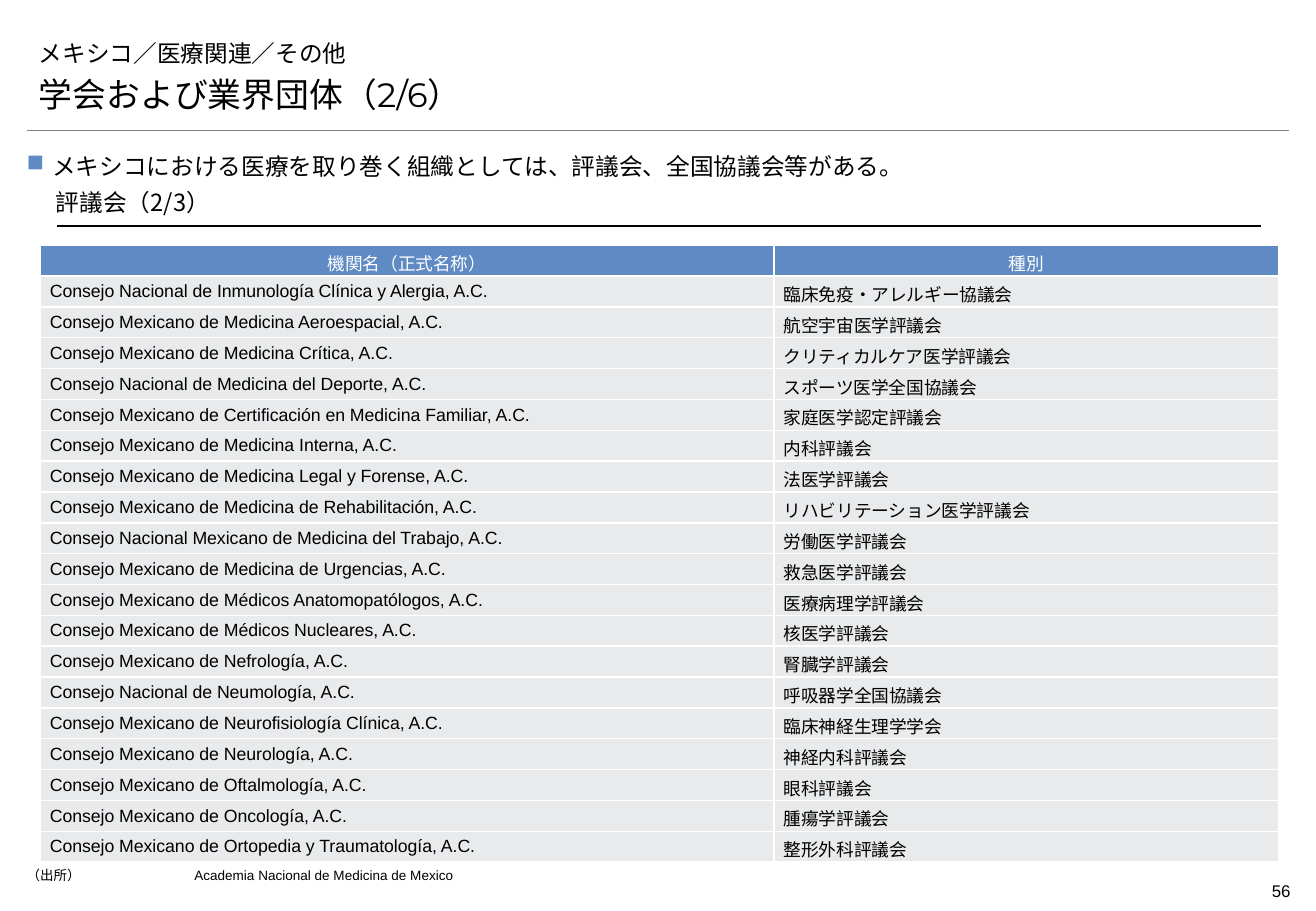
from lxml import etree
from pptx import Presentation
from pptx import util as u
from pptx.dml.color import RGBColor
from pptx.enum import shapes, text
from pptx.oxml import ns

BLACK, WHITE, BLUE, PALE, GRAY = "000000", "FFFFFF", "5F8AC3", "E8EAEC", "7F7F7F"

COUNCILS = [
    ("Consejo Nacional de Inmunología Clínica y Alergia, A.C.", "臨床免疫・アレルギー協議会"),
    ("Consejo Mexicano de Medicina Aeroespacial, A.C.", "航空宇宙医学評議会"),
    ("Consejo Mexicano de Medicina Crítica, A.C.", "クリティカルケア医学評議会"),
    ("Consejo Nacional de Medicina del Deporte, A.C.", "スポーツ医学全国協議会"),
    ("Consejo Mexicano de Certificación en Medicina Familiar, A.C.", "家庭医学認定評議会"),
    ("Consejo Mexicano de Medicina Interna, A.C.", "内科評議会"),
    ("Consejo Mexicano de Medicina Legal y Forense, A.C.", "法医学評議会"),
    ("Consejo Mexicano de Medicina de Rehabilitación, A.C.", "リハビリテーション医学評議会"),
    ("Consejo Nacional Mexicano de Medicina del Trabajo, A.C.", "労働医学評議会"),
    ("Consejo Mexicano de Medicina de Urgencias, A.C.", "救急医学評議会"),
    ("Consejo Mexicano de Médicos Anatomopatólogos, A.C.", "医療病理学評議会"),
    ("Consejo Mexicano de Médicos Nucleares, A.C.", "核医学評議会"),
    ("Consejo Mexicano de Nefrología, A.C.", "腎臓学評議会"),
    ("Consejo Nacional de Neumología, A.C.", "呼吸器学全国協議会"),
    ("Consejo Mexicano de Neurofisiología Clínica, A.C.", "臨床神経生理学学会"),
    ("Consejo Mexicano de Neurología, A.C.", "神経内科評議会"),
    ("Consejo Mexicano de Oftalmología, A.C.", "眼科評議会"),
    ("Consejo Mexicano de Oncología, A.C.", "腫瘍学評議会"),
    ("Consejo Mexicano de Ortopedia y Traumatología, A.C.", "整形外科評議会"),
]


def color(value):
    return RGBColor.from_string(value)


def add_xml(parent, tag, **attributes):
    names = {name: str(value) for name, value in attributes.items()}
    return etree.SubElement(parent, ns.qn(tag), names)


class Sheet:
    """Current slide and its style; lengths are percent of the slide's size."""

    def __init__(self, deck, font="Arial"):
        self.deck, self.font = deck, font
        self.page = deck.slides.add_slide(deck.slide_layouts[1])

    def x(self, share):
        return u.Emu(round(self.deck.slide_width * share / 100))

    def y(self, share):
        return u.Emu(round(self.deck.slide_height * share / 100))

    def area(self, left, top, width, height):
        return self.x(left), self.y(top), self.x(width), self.y(height)

    def style(self, para, size, font=None, ink=BLACK, align=text.PP_ALIGN.LEFT):
        para.alignment = align
        para.font.size, para.font.name = u.Pt(size), font or self.font
        para.font.color.rgb = color(ink)

    def heading(self, box, words, area, size):
        box.left, box.top, box.width, box.height = self.area(*area)
        frame = box.text_frame
        frame.text = words
        frame.auto_size = text.MSO_AUTO_SIZE.NONE
        frame.vertical_anchor = text.MSO_ANCHOR.BOTTOM
        para = frame.paragraphs[0]
        settings = para._p.get_or_add_pPr()
        settings.set("marL", "0")
        settings.set("indent", "0")
        add_xml(settings, "a:buNone")
        para.space_before = u.Pt(0)
        self.style(para, size, "Montserrat")

    def label(self, words, area, size, top=0, bottom=0, bullet=None, tab=None,
              anchor=text.MSO_ANCHOR.TOP, **style):
        frame = self.page.shapes.add_textbox(*self.area(*area)).text_frame
        frame.word_wrap, frame.vertical_anchor = True, anchor
        frame.margin_left = frame.margin_right = 0
        frame.margin_top, frame.margin_bottom = self.y(top), self.y(bottom)
        para = frame.paragraphs[0]
        para.text = words
        settings = para._p.get_or_add_pPr()
        if bullet:
            indent = self.x(1.94)
            settings.set("marL", str(indent))
            settings.set("indent", str(-indent))
            add_xml(add_xml(settings, "a:buClr"), "a:srgbClr", val=BLUE)
            add_xml(settings, "a:buChar", char=bullet)
        if tab:
            add_xml(add_xml(settings, "a:tabLst"), "a:tab", pos=self.x(tab), algn="l")
        self.style(para, size, **style)
        return para

    def rule(self, left, right, level, ink, weight):
        line = self.page.shapes.add_connector(
            shapes.MSO_CONNECTOR.STRAIGHT,
            self.x(left), self.y(level), self.x(right), self.y(level))
        line.line.color.rgb, line.line.width = color(ink), u.Pt(weight)
        add_xml(line._element.spPr, "a:effectLst")

    def cell(self, cell, words, fill, japanese, **style):
        cell.text = words
        cell.vertical_anchor = text.MSO_ANCHOR.MIDDLE
        cell.margin_left = cell.margin_right = self.x(0.74)
        cell.margin_top = self.y(0.53)
        # Japanese lines are taller and need the lower margin
        cell.margin_bottom = 0 if japanese else self.y(0.53)
        settings = cell._tc.get_or_add_tcPr()
        for side in "LRTB":
            border = add_xml(settings, f"a:ln{side}", w=u.Pt(1))
            add_xml(add_xml(border, "a:solidFill"), "a:srgbClr", val=WHITE)
        cell.fill.solid()
        cell.fill.fore_color.rgb = color(fill)
        self.style(cell.text_frame.paragraphs[0], 10.5, **style)

    def table(self, header, rows, area, widths):
        table = self.page.shapes.add_table(
            len(rows) + 1, len(header), *self.area(*area)).table
        for column, width in zip(table.columns, widths):
            column.width = self.x(width)
        for row in table.rows:
            row.height = self.y(area[3] / (len(rows) + 1))
        for index, words in enumerate(header):
            self.cell(table.cell(0, index), words, BLUE, True,
                      ink=WHITE, align=text.PP_ALIGN.CENTER)
        for number, row in enumerate(rows, 1):
            for index, words in enumerate(row):
                self.cell(table.cell(number, index), words, PALE, index == 1)


def main():
    deck = Presentation()
    deck.slide_width, deck.slide_height = u.Inches(10.83), u.Inches(7.5)
    sheet = Sheet(deck)
    title, subject = sheet.page.placeholders
    left, width = 2.03, 95.94

    # Title block and page number
    sheet.rule(left, left + width, 14.27, GRAY, 0.25)
    sheet.heading(title, "メキシコ／医療関連／その他", (left, 2.8, width, 5.2), 14)
    sheet.heading(subject, "学会および業界団体（2/6）", (left, 8, width, 5.2), 20)
    sheet.label("56", (90.77, 96, 7.29, 3.6), 10, top=0.67, bottom=0.67,
                align=text.PP_ALIGN.RIGHT)

    # Key message and section heading
    message = sheet.label("メキシコにおける医療を取り巻く組織としては、評議会、全国協議会等がある。",
                          (left, 16.4, width, 3.47), 14, bullet="■",
                          align=text.PP_ALIGN.JUSTIFY)
    message.line_spacing, message.space_after = 1.1, u.Pt(2)
    sheet.rule(4.34, 95.84, 24.8, BLACK, 0.75)
    sheet.label("評議会（2/3）", (4.25, 20.67, 91.6, 4.13), 14, top=0.67, bottom=1.07,
                anchor=text.MSO_ANCHOR.BOTTOM, font="Noto Sans CJK JP")

    # Councils and their source
    sheet.table(("機関名（正式名称）", "種別"), COUNCILS,
                (3.05, 26.93, 94.09, 67.6), (55.77, 38.32))
    sheet.label("（出所）\tAcademia Nacional de Medicina de Mexico",
                (left, 95.2, 88.73, 2.13), 8, tab=12.74)

    deck.save("out.pptx")


if __name__ == "__main__":
    main()
